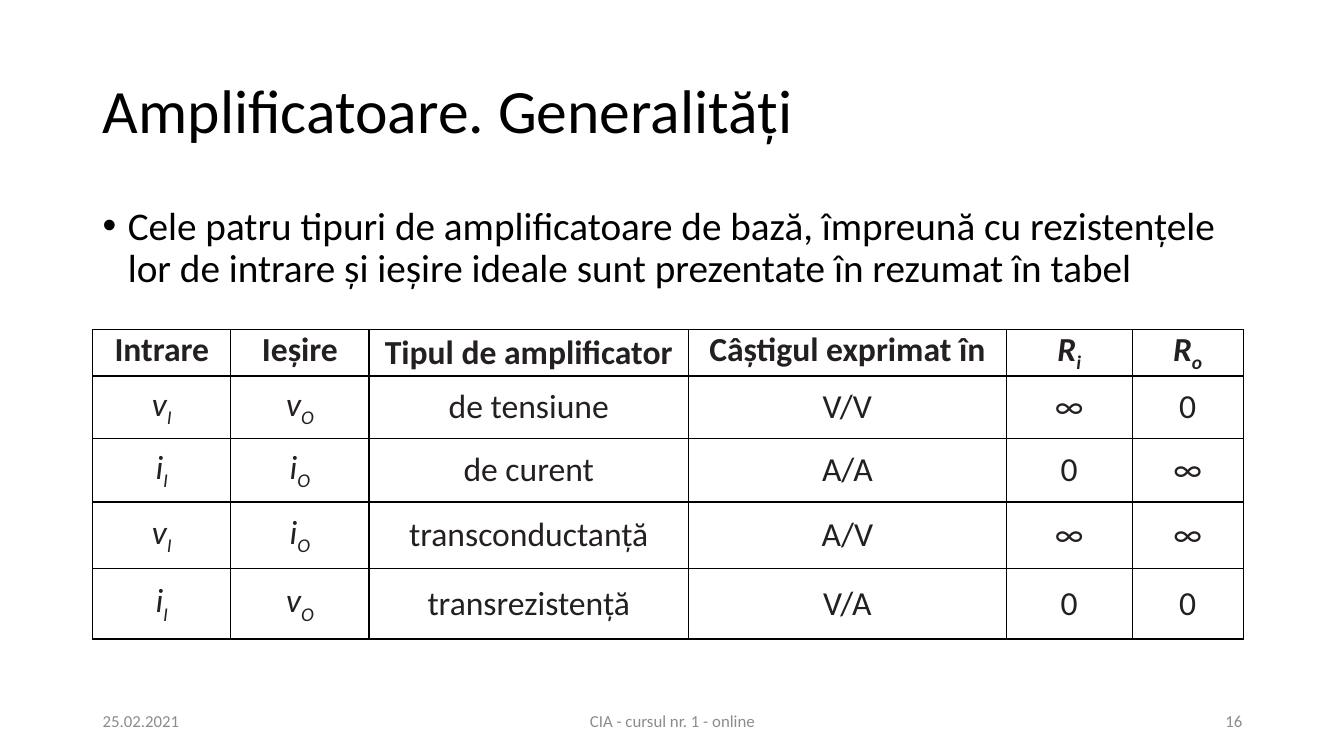
import lxml.etree
import pptx
import pptx.dml.color
import pptx.enum.text
import pptx.oxml.ns
import pptx.util

Inches = pptx.util.Inches
Pt = pptx.util.Pt
RGBColor = pptx.dml.color.RGBColor
ALIGN = pptx.enum.text.PP_ALIGN
ANCHOR = pptx.enum.text.MSO_ANCHOR
qn = pptx.oxml.ns.qn

BLACK = RGBColor(0x00, 0x00, 0x00)
INK = RGBColor(0x24, 0x20, 0x21)
GREY = RGBColor(0x8C, 0x8C, 0x8C)
FONT = "Calibri"

COLUMN_WIDTHS = [1.37, 1.37, 3.17, 3.15, 1.25, 1.1]
ROW_HEIGHTS = [0.46, 0.62, 0.63, 0.66, 0.7]
AMPLIFIERS = [
    ["Intrare", "Ieșire", "Tipul de amplificator", "Câștigul exprimat în", "R_i", "R_o"],
    ["v_I", "v_O", "de tensiune", "V/V", "∞", "0"],
    ["i_I", "i_O", "de curent", "A/A", "0", "∞"],
    ["v_I", "i_O", "transconductanță", "A/V", "∞", "∞"],
    ["i_I", "v_O", "transrezistență", "V/A", "0", "0"],
]


def apply_format(target, values):
    """Set each named attribute of the target."""
    for name, value in values.items():
        setattr(target, name, value)


def add_span(para, text, size, color, **values):
    """Add a run of text to a paragraph and return it."""
    span = para.add_run()
    span.text = text
    apply_format(span.font, {"name": FONT, "size": Pt(size), **values})
    span.font.color.rgb = color
    return span


def add_text_box(page, box, anchor):
    """Add a wrapping text box and return its first paragraph."""
    frame = page.shapes.add_textbox(*map(Inches, box)).text_frame
    apply_format(frame, {"word_wrap": True, "vertical_anchor": anchor})
    return frame.paragraphs[0]


def add_title(page, box, text):
    """Place and format the title placeholder."""
    title = page.shapes.title
    places = dict(zip(("left", "top", "width", "height"), map(Inches, box)))
    apply_format(title, places)
    frame = title.text_frame
    apply_format(frame, {"vertical_anchor": ANCHOR.MIDDLE, "word_wrap": True,
                         "auto_size": pptx.enum.text.MSO_AUTO_SIZE.NONE})
    para = frame.paragraphs[0]
    apply_format(para, {"alignment": ALIGN.LEFT, "line_spacing": 0.9})
    add_span(para, text, 44, BLACK)


def add_bullet(page, box, text):
    """Add the bulleted introduction."""
    para = add_text_box(page, box, ANCHOR.TOP)
    apply_format(para, {"line_spacing": 0.9, "space_before": Pt(10)})
    add_span(para, text, 28, BLACK)
    properties = para._p.get_or_add_pPr()
    properties.set("marL", str(Inches(0.25)))
    properties.set("indent", str(-Inches(0.25)))
    lxml.etree.SubElement(properties, qn("a:buFont"), typeface="Arial")
    lxml.etree.SubElement(properties, qn("a:buChar"), char="•")


def add_borders(cell):
    """Draw a thin black line on every side of a cell."""
    properties = cell._tc.get_or_add_tcPr()
    for position, side in enumerate(("lnL", "lnR", "lnT", "lnB")):
        line = lxml.etree.Element(qn(f"a:{side}"), w=str(Pt(1)))
        fill = lxml.etree.SubElement(line, qn("a:solidFill"))
        lxml.etree.SubElement(fill, qn("a:srgbClr"), val=str(BLACK))
        properties.insert(position, line)


def fill_cell(cell, text, bold, anchor):
    """Write a cell, setting what follows an underscore as a subscript."""
    apply_format(cell, {"margin_left": Inches(0.14), "margin_right": Inches(0.14),
                        "margin_top": 0, "margin_bottom": 0, "vertical_anchor": anchor})
    cell.fill.background()
    add_borders(cell)
    para = cell.text_frame.paragraphs[0]
    para.alignment = ALIGN.CENTER
    symbol, _, subscript = text.partition("_")
    values = {"bold": bold, "italic": bool(subscript)}
    add_span(para, symbol, 24, INK, **values)
    if subscript:
        span = add_span(para, subscript, 24, INK, **values)
        span.font._element.set("baseline", "-25000")


def add_amplifier_table(page, left, top):
    """Add the table of amplifier types."""
    size = (sum(COLUMN_WIDTHS), sum(ROW_HEIGHTS))
    table = page.shapes.add_table(len(ROW_HEIGHTS), len(COLUMN_WIDTHS),
                                  *map(Inches, (left, top, *size))).table
    apply_format(table, {"first_row": False, "horz_banding": False})
    for column, width in zip(table.columns, COLUMN_WIDTHS):
        column.width = Inches(width)
    for row, height in zip(table.rows, ROW_HEIGHTS):
        row.height = Inches(height)
    for row, texts in enumerate(AMPLIFIERS):
        for column, text in enumerate(texts):
            header = row == 0
            anchor = ANCHOR.TOP if header and column != 2 else ANCHOR.MIDDLE
            fill_cell(table.cell(row, column), text, header, anchor)


def add_footer(page, box):
    """Add the date, course name and page number along the box."""
    left, top, width, height = box
    parts = [
        (left, 3, "25.02.2021", ALIGN.LEFT),
        (left + (width - 4.5) / 2, 4.5, "CIA - cursul nr. 1 - online", ALIGN.CENTER),
        (left + width - 3, 3, "16", ALIGN.RIGHT),
    ]
    for start, span_width, text, alignment in parts:
        para = add_text_box(page, (start, top, span_width, height), ANCHOR.MIDDLE)
        para.alignment = alignment
        add_span(para, text, 12, GREY)


def main():
    """Build the slide and save it."""
    deck = pptx.Presentation()
    apply_format(deck, {"slide_width": Inches(13.33), "slide_height": Inches(7.5)})
    page = deck.slides.add_slide(deck.slide_layouts[5])
    add_title(page, (0.92, 0.4, 11.5, 1.45), "Amplificatoare. Generalități")
    add_bullet(page, (0.92, 2, 11.5, 4.76),
               "Cele patru tipuri de amplificatoare de bază, împreună cu rezistențele "
               "lor de intrare și ieșire ideale sunt prezentate în rezumat în tabel")
    add_footer(page, (0.92, 6.95, 11.5, 0.4))
    add_amplifier_table(page, 0.92, 3.27)
    deck.save("out.pptx")


if __name__ == "__main__":
    main()
